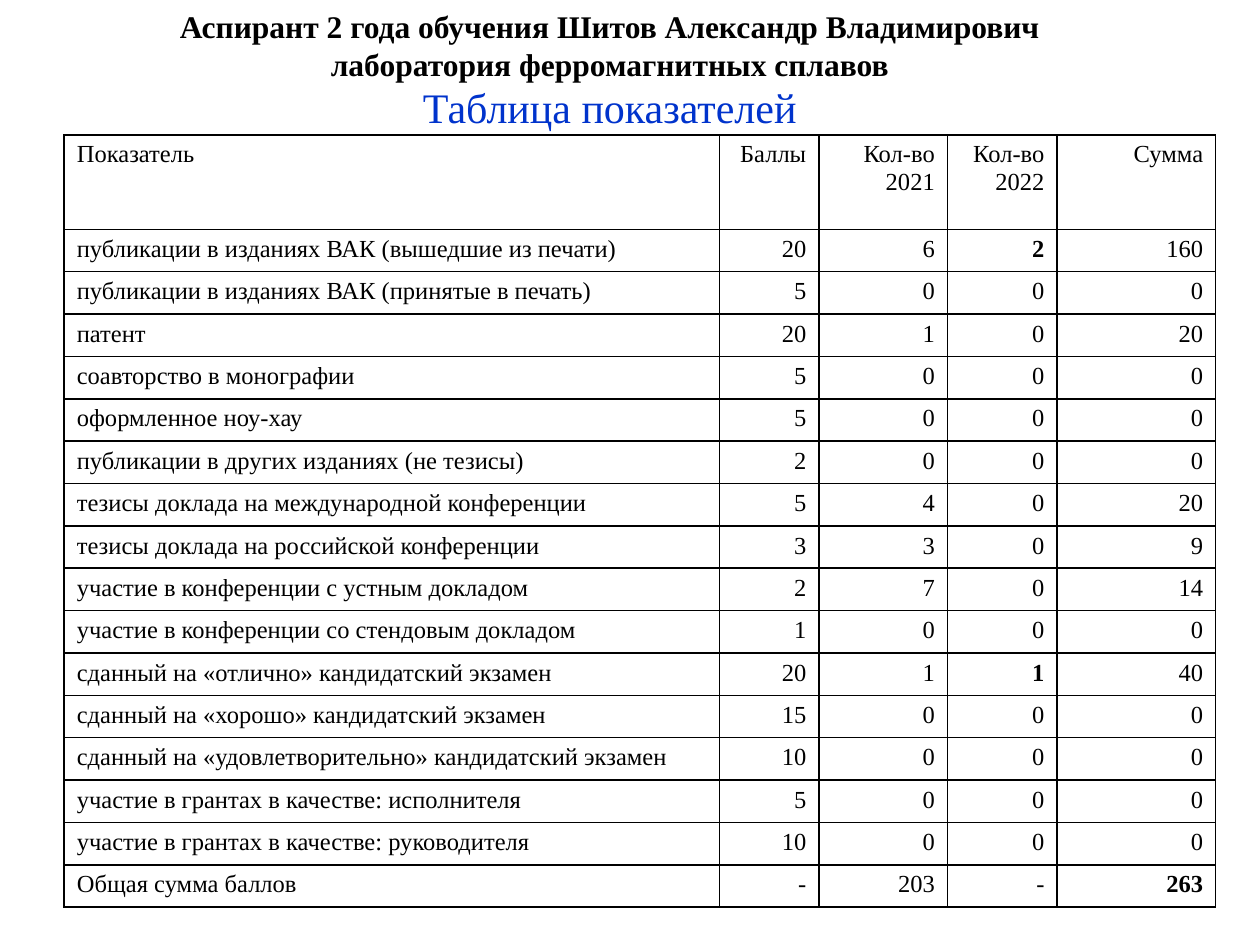
from dataclasses import dataclass
from typing import NamedTuple

import lxml.etree
import pptx
import pptx.dml.color
import pptx.enum.text
import pptx.oxml.ns
import pptx.util

Inches = pptx.util.Inches
Align = pptx.enum.text.PP_ALIGN
Anchor = pptx.enum.text.MSO_ANCHOR


@dataclass(frozen=True)
class Theme:
    font: str = "Times New Roman"
    ink: str = "000000"
    accent: str = "0033CC"
    title_size: int = 18
    subtitle_size: int = 24
    table_size: int = 14
    border_width: int = 1


class Box(NamedTuple):
    left: float
    top: float
    width: float
    height: float

    def lengths(self) -> dict:
        return {name: Inches(value) for name, value in self._asdict().items()}


class Indicator(NamedTuple):
    name: str
    points: str
    count_2021: str
    count_2022: str
    total: str


THEME = Theme()
TITLE_BOX = Box(0.59, 0, 8.5, 0.71)
SUBTITLE_BOX = Box(1.34, 0.6, 7, 0.47)
TABLE_BOX = Box(0.51, 1.07, 9.14, 6.13)
COLUMN_WIDTHS = (5.2, 0.79, 1.02, 0.87, 1.26)
HEADER_HEIGHT = 0.75

HEADER = Indicator("Показатель", "Баллы", "Кол-во 2021", "Кол-во 2022", "Сумма")
INDICATORS = [
    Indicator("публикации в изданиях ВАК (вышедшие из печати)", "20", "6", "2", "160"),
    Indicator("публикации в изданиях ВАК (принятые в печать)", "5", "0", "0", "0"),
    Indicator("патент", "20", "1", "0", "20"),
    Indicator("соавторство в монографии", "5", "0", "0", "0"),
    Indicator("оформленное ноу-хау", "5", "0", "0", "0"),
    Indicator("публикации в других изданиях (не тезисы)", "2", "0", "0", "0"),
    Indicator("тезисы доклада на международной конференции", "5", "4", "0", "20"),
    Indicator("тезисы доклада на российской конференции", "3", "3", "0", "9"),
    Indicator("участие в конференции с устным докладом", "2", "7", "0", "14"),
    Indicator("участие в конференции со стендовым докладом", "1", "0", "0", "0"),
    Indicator("сданный на «отлично» кандидатский экзамен", "20", "1", "1", "40"),
    Indicator("сданный на «хорошо» кандидатский экзамен", "15", "0", "0", "0"),
    Indicator("сданный на «удовлетворительно» кандидатский экзамен", "10", "0", "0", "0"),
    Indicator("участие в грантах в качестве: исполнителя", "5", "0", "0", "0"),
    Indicator("участие в грантах в качестве: руководителя", "10", "0", "0", "0"),
    Indicator("Общая сумма баллов", "-", "203", "-", "263"),
]


def set_attributes(target, values: dict) -> None:
    for name, value in values.items():
        setattr(target, name, value)


def write_text(frame, text: str, size: int, alignment, color: str = THEME.ink,
               bold: bool = False) -> None:
    frame.text = text
    paragraph = frame.paragraphs[0]
    paragraph.alignment = alignment
    for run in paragraph.runs:
        set_attributes(run.font, {"name": THEME.font, "size": pptx.util.Pt(size), "bold": bold})
        run.font.color.rgb = pptx.dml.color.RGBColor.from_string(color)


def is_bold(indicator: Indicator, field: str) -> bool:
    """Results gained in 2022 and the grand total stand out."""
    if field == "count_2022":
        return indicator.count_2022.isdigit() and int(indicator.count_2022) > 0
    return field == "total" and indicator is INDICATORS[-1]


def draw_borders(cell) -> None:
    """Add the four border lines ahead of the cell fill, as the schema orders them."""
    properties = cell._tc.get_or_add_tcPr()
    qn = pptx.oxml.ns.qn
    for position, side in enumerate(("a:lnL", "a:lnR", "a:lnT", "a:lnB")):
        line = lxml.etree.Element(qn(side), w=str(pptx.util.Pt(THEME.border_width)))
        fill = lxml.etree.SubElement(line, qn("a:solidFill"))
        lxml.etree.SubElement(fill, qn("a:srgbClr"), val=THEME.ink)
        properties.insert(position, line)


def draw_table(slide, rows: list[Indicator]) -> None:
    table = slide.shapes.add_table(len(rows), len(COLUMN_WIDTHS), **TABLE_BOX.lengths()).table
    set_attributes(table, {"first_row": False, "horz_banding": False})
    for column, width in zip(table.columns, COLUMN_WIDTHS):
        column.width = Inches(width)
    row_height = (TABLE_BOX.height - HEADER_HEIGHT) / (len(rows) - 1)
    for row_index, indicator in enumerate(rows):
        table.rows[row_index].height = Inches(row_height if row_index else HEADER_HEIGHT)
        for column_index, (field, text) in enumerate(indicator._asdict().items()):
            cell = table.cell(row_index, column_index)
            alignment = Align.RIGHT if column_index else Align.JUSTIFY
            write_text(cell.text_frame, text, THEME.table_size, alignment,
                       bold=is_bold(indicator, field))
            cell.fill.background()
            draw_borders(cell)


def draw_headings(slide) -> None:
    title = slide.shapes.title
    set_attributes(title, TITLE_BOX.lengths())
    set_attributes(title.text_frame, {"vertical_anchor": Anchor.MIDDLE, "word_wrap": True,
                                      "auto_size": pptx.enum.text.MSO_AUTO_SIZE.NONE})
    write_text(title.text_frame,
               "Аспирант 2 года обучения Шитов Александр Владимирович\v"
               "лаборатория ферромагнитных сплавов",
               THEME.title_size, Align.CENTER, bold=True)

    subtitle = slide.shapes.add_textbox(**SUBTITLE_BOX.lengths())
    subtitle.text_frame.word_wrap = True
    write_text(subtitle.text_frame, "Таблица показателей", THEME.subtitle_size,
               Align.CENTER, THEME.accent)


def main() -> None:
    presentation = pptx.Presentation()
    set_attributes(presentation, {"slide_width": Inches(10), "slide_height": Inches(7.5)})
    slide = presentation.slides.add_slide(presentation.slide_layouts[5])
    draw_headings(slide)
    draw_table(slide, [HEADER, *INDICATORS])
    presentation.save("out.pptx")


if __name__ == "__main__":
    main()
